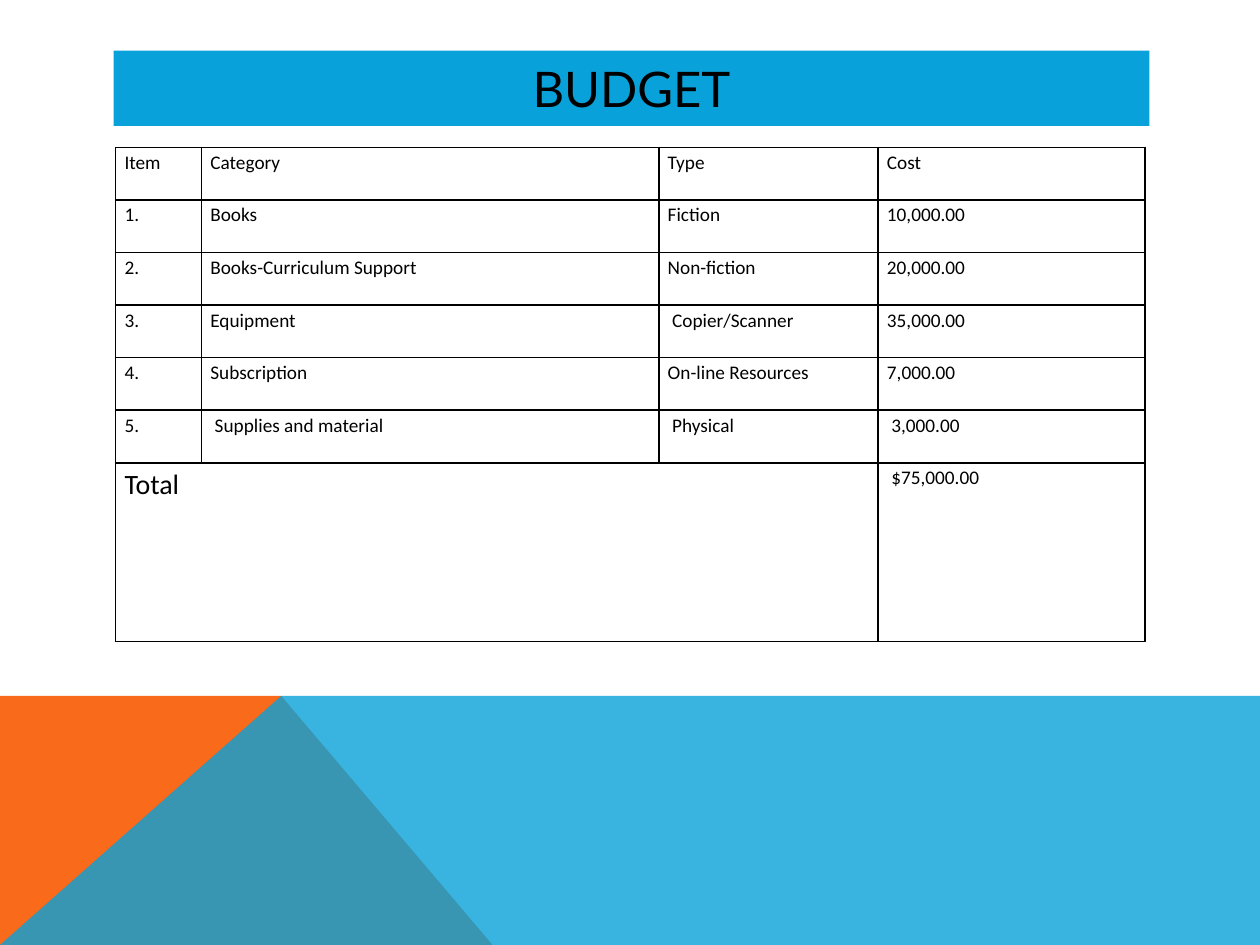
from dataclasses import dataclass

from lxml import etree
from pptx import Presentation
from pptx import util as u
from pptx.dml import color
from pptx.enum import shapes, text
from pptx.oxml import ns


@dataclass(frozen=True)
class Theme:
    """Colours, fonts and type sizes of the slide."""
    blue: str = "08A1D9"
    orange: str = "F96A1B"
    ink: str = "000000"
    band_alpha: int = 80
    title_font: str = "Lato"
    body_font: str = "Calibri"
    title_size: int = 28
    total_size: int = 16
    body_size: int = 11
    border_width: int = 1


THEME = Theme()
BUDGET = [
    ["Item", "Category", "Type", "Cost"],
    ["1.", "Books", "Fiction", "10,000.00"],
    ["2.", "Books-Curriculum Support", "Non-fiction", "20,000.00"],
    ["3.", "Equipment", " Copier/Scanner", "35,000.00"],
    ["4.", "Subscription", "On-line Resources", "7,000.00"],
    ["5.", " Supplies and material", " Physical", " 3,000.00"],
    ["Total", "", "", " $75,000.00"],
]
COLUMN_WIDTHS = [1.73, 9.22, 4.42, 5.38]
ITEM_HEIGHT, TOTAL_HEIGHT = 1.06, 3.6


def apply(target, values):
    """Set every attribute named in values on target."""
    for name, value in values.items():
        setattr(target, name, value)


def write(frame, wording, font, size, **paragraph_format):
    """Put one formatted run into a text frame."""
    paragraph = frame.paragraphs[0]
    apply(paragraph, paragraph_format)
    run = paragraph.add_run()
    run.text = wording
    apply(run.font, {"name": font, "size": u.Pt(size)})
    run.font.color.rgb = color.RGBColor.from_string(THEME.ink)


def paint(shape, fill):
    """Give a shape a plain fill without line or shadow."""
    shape.fill.solid()
    shape.fill.fore_color.rgb = color.RGBColor.from_string(fill)
    shape.line.fill.background()
    shape.shadow.inherit = False


def add_polygon(slide, points, fill):
    """Draw a closed outline through points given in centimetres."""
    corners = [(u.Cm(x), u.Cm(y)) for x, y in points]
    builder = slide.shapes.build_freeform(*corners[0])
    builder.add_line_segments(corners[1:], close=True)
    polygon = builder.convert_to_shape()
    paint(polygon, fill)
    return polygon


def add_footer_band(slide, left, top, width, height):
    """Draw the orange triangle and the translucent blue band over it."""
    right, bottom = left + width, top + height
    peak = (left + 5.67, top)
    add_polygon(slide, [(left, bottom), (left, top), peak,
                        (left + 9.93, bottom)], THEME.orange)
    band = add_polygon(slide, [(left, bottom), peak, (right, top),
                               (right, bottom)], THEME.blue)
    tint = band.fill._xPr.find(".//" + ns.qn("a:srgbClr"))
    etree.SubElement(tint, ns.qn("a:alpha"), val=str(THEME.band_alpha * 1000))


def add_title(slide, left, top, width, height):
    """Place the title bar."""
    bar = slide.shapes.add_shape(
        shapes.MSO_SHAPE.RECTANGLE, *map(u.Cm, (left, top, width, height)))
    paint(bar, THEME.blue)
    apply(bar.text_frame, {"word_wrap": True,
                           "vertical_anchor": text.MSO_ANCHOR.MIDDLE})
    write(bar.text_frame, "BUDGET", THEME.title_font, THEME.title_size,
          alignment=text.PP_ALIGN.CENTER)


def style_cell(cell):
    """Set the margins, borders and empty fill of a cell."""
    apply(cell, {"margin_left": u.Cm(0.18), "margin_right": u.Cm(0.18),
                 "margin_top": 0, "margin_bottom": 0,
                 "vertical_anchor": text.MSO_ANCHOR.TOP})
    properties = cell._tc.get_or_add_tcPr()
    for side in ("lnL", "lnR", "lnT", "lnB"):
        border = etree.SubElement(properties, ns.qn(f"a:{side}"),
                                  w=str(u.Pt(THEME.border_width)))
        fill = etree.SubElement(border, ns.qn("a:solidFill"))
        etree.SubElement(fill, ns.qn("a:srgbClr"), val=THEME.ink)
    cell.fill.background()


def add_budget_table(slide, left, top):
    """Place the budget table with its merged total row."""
    heights = [ITEM_HEIGHT] * (len(BUDGET) - 1) + [TOTAL_HEIGHT]
    table = slide.shapes.add_table(
        len(BUDGET), len(COLUMN_WIDTHS), u.Cm(left), u.Cm(top),
        u.Cm(sum(COLUMN_WIDTHS)), u.Cm(sum(heights))).table
    apply(table, {"first_row": False, "horz_banding": False})
    for column, width in zip(table.columns, COLUMN_WIDTHS):
        column.width = u.Cm(width)
    for row, height, entries in zip(table.rows, heights, BUDGET):
        row.height = u.Cm(height)
        for cell, entry in zip(row.cells, entries):
            style_cell(cell)
            if entry:
                size = THEME.total_size if entry == "Total" else THEME.body_size
                write(cell.text_frame, entry, THEME.body_font, size,
                      line_spacing=1.15)
    total_row = len(BUDGET) - 1
    table.cell(total_row, 0).merge(table.cell(total_row, 2))


def main():
    """Build and save the budget slide."""
    deck = Presentation()
    apply(deck, {"slide_width": u.Cm(25.4), "slide_height": u.Cm(19.05)})
    slide = deck.slides.add_slide(deck.slide_layouts[6])
    add_footer_band(slide, 0, 14.03, 25.4, 5.02)
    add_title(slide, 2.29, 1.02, 20.88, 1.52)
    add_budget_table(slide, 2.33, 2.97)
    deck.save("out.pptx")


if __name__ == "__main__":
    main()
